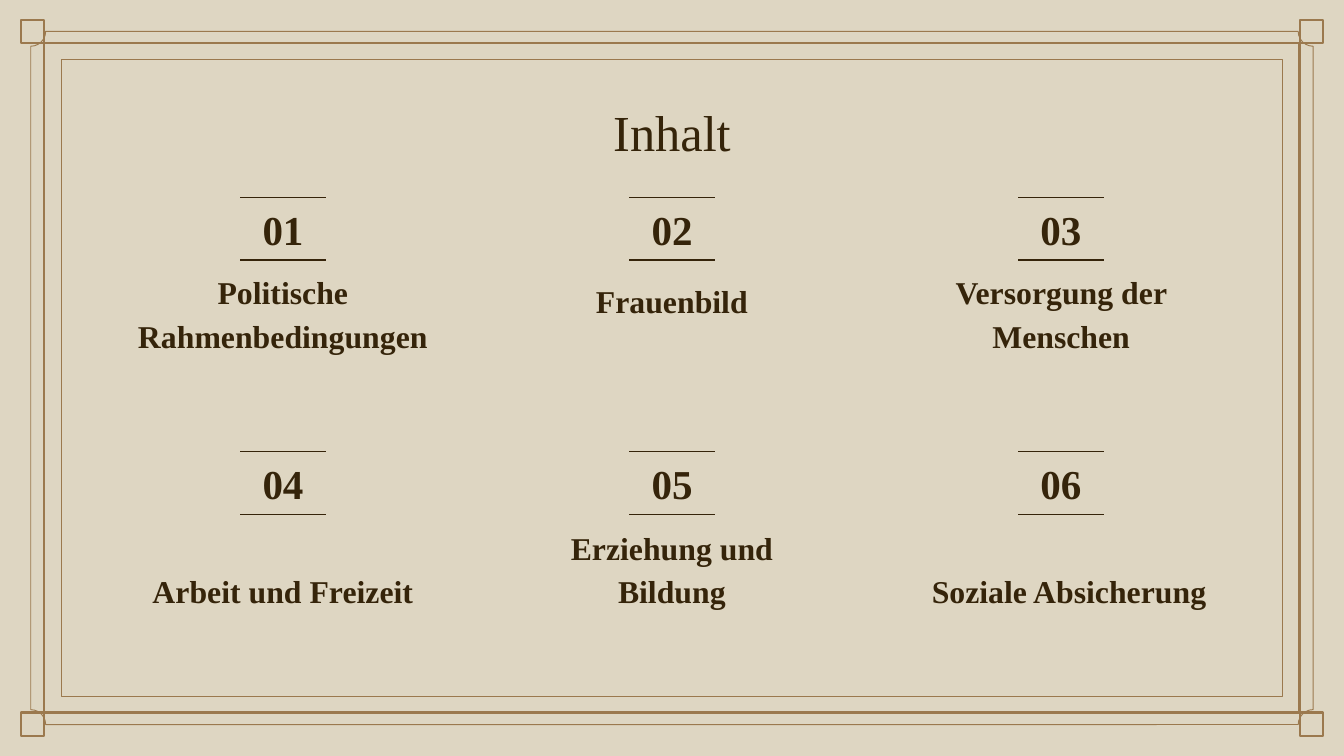
"""Build a framed table-of-contents slide with six numbered topics."""
from dataclasses import dataclass

from lxml.etree import SubElement
from pptx import Presentation
from pptx.dml.color import RGBColor
from pptx.enum.shapes import MSO_CONNECTOR, MSO_SHAPE
from pptx.enum.text import MSO_ANCHOR, MSO_AUTO_SIZE, PP_ALIGN
from pptx.oxml.ns import qn
from pptx.shapes.autoshape import Shape
from pptx.slide import Slide
from pptx.util import Pt

PAPER, BRONZE, INK = "DED6C2", "9B794E", "35240A"
FONT = "Times New Roman"
SLIDE_WIDTH, SLIDE_HEIGHT = 720, 405
COLUMN_CENTERS = (151.6, 360, 568.4)
ROW_TOPS = (105.7, 242)
RULE_WIDTH, RULE_GAP = 45.8, 33.6
NUMBER_WIDTH, NUMBER_HEIGHT = 57, 35.3
CAPTION_HEIGHT = 38.2
CORNER_SIZE, CORNER_MARGIN = 12.5, 11.2
NOTCH_RADIUS = 8


@dataclass(frozen=True)
class Box:
    left: float
    top: float
    width: float
    height: float


@dataclass(frozen=True)
class Topic:
    caption: str
    box: Box


TOPICS = (
    Topic("Politische Rahmenbedingungen", Box(39.6, 159.1, 224, CAPTION_HEIGHT)),
    Topic("Frauenbild", Box(271, 140.4, 178, CAPTION_HEIGHT)),
    Topic("Versorgung der Menschen", Box(479.5, 159.1, 178, CAPTION_HEIGHT)),
    Topic("Arbeit und Freizeit", Box(62.6, 296, 178, CAPTION_HEIGHT)),
    Topic("Erziehung und Bildung", Box(271, 296, 178, CAPTION_HEIGHT)),
    Topic("Soziale Absicherung", Box(483.8, 296, 178, CAPTION_HEIGHT)),
)


def color(value: str) -> RGBColor:
    """Turn a hex string into a colour."""
    return RGBColor.from_string(value)


def inset_box(horizontal: float, vertical: float) -> Box:
    """Return a box centred on the slide with the given margins."""
    return Box(horizontal, vertical, SLIDE_WIDTH - 2 * horizontal, SLIDE_HEIGHT - 2 * vertical)


def add_outline(slide: Slide, preset: MSO_SHAPE, box: Box, weight: float) -> Shape:
    """Draw an unfilled bronze outline."""
    shape = slide.shapes.add_shape(preset, Pt(box.left), Pt(box.top), Pt(box.width), Pt(box.height))
    shape.shadow.inherit = False
    shape.fill.background()
    shape.line.color.rgb = color(BRONZE)
    shape.line.width = Pt(weight)
    return shape


def add_frame(slide: Slide) -> None:
    """Draw the nested frames and the four corner squares."""
    add_outline(slide, MSO_SHAPE.RECTANGLE, inset_box(23.7, 23.2), 1.28)
    add_outline(slide, MSO_SHAPE.RECTANGLE, inset_box(33, 31.8), 0.5)
    notched_box = inset_box(16.5, 16.8)
    notched = add_outline(slide, MSO_SHAPE.PLAQUE, notched_box, 0.5)
    notched.adjustments[0] = NOTCH_RADIUS / notched_box.height
    for left in (CORNER_MARGIN, SLIDE_WIDTH - CORNER_MARGIN - CORNER_SIZE):
        for top in (10.7, SLIDE_HEIGHT - 10.7 - CORNER_SIZE):
            corner = Box(left, top, CORNER_SIZE, CORNER_SIZE)
            add_outline(slide, MSO_SHAPE.RECTANGLE, corner, 1.28)


def write_text(shape: Shape, text: str, box: Box, size: float, bold: bool,
               anchor: MSO_ANCHOR, line_spacing: float = 1.0) -> None:
    """Place a text shape and format its centred text."""
    shape.left, shape.top = Pt(box.left), Pt(box.top)
    shape.width, shape.height = Pt(box.width), Pt(box.height)
    frame = shape.text_frame
    frame.text = text
    frame.word_wrap = True
    frame.auto_size = MSO_AUTO_SIZE.NONE
    frame.vertical_anchor = anchor
    frame.margin_left = frame.margin_right = Pt(7.2)
    frame.margin_top = frame.margin_bottom = Pt(7.2)
    paragraph = frame.paragraphs[0]
    paragraph.alignment = PP_ALIGN.CENTER
    paragraph.line_spacing = line_spacing
    font = paragraph.runs[0].font
    font.name, font.size, font.bold = FONT, Pt(size), bold
    font.color.rgb = color(INK)


def add_text(slide: Slide, text: str, box: Box, size: float,
             anchor: MSO_ANCHOR, line_spacing: float = 1.0) -> None:
    """Add a bold text box."""
    shape = slide.shapes.add_textbox(0, 0, 0, 0)
    write_text(shape, text, box, size, True, anchor, line_spacing)


def add_rule(slide: Slide, center: float, top: float) -> None:
    """Draw a short horizontal rule around a centre."""
    rule = slide.shapes.add_connector(
        MSO_CONNECTOR.STRAIGHT, Pt(center - RULE_WIDTH / 2), Pt(top),
        Pt(center + RULE_WIDTH / 2), Pt(top))
    rule.line.color.rgb = color(INK)
    rule.line.width = Pt(0.75)
    SubElement(rule._element.spPr, qn("a:effectLst"))


def add_topic(slide: Slide, index: int, topic: Topic) -> None:
    """Draw a number between two rules and its caption."""
    row, column = divmod(index, len(COLUMN_CENTERS))
    center, top = COLUMN_CENTERS[column], ROW_TOPS[row]
    number_box = Box(center - NUMBER_WIDTH / 2, top - 0.6, NUMBER_WIDTH, NUMBER_HEIGHT)
    add_text(slide, f"{index + 1:02d}", number_box, 22, MSO_ANCHOR.MIDDLE)
    add_text(slide, topic.caption, topic.box, 17, MSO_ANCHOR.BOTTOM, 1.15)
    add_rule(slide, center, top)
    add_rule(slide, center, top + RULE_GAP)


def main() -> None:
    """Create and save the presentation."""
    presentation = Presentation()
    presentation.slide_width = Pt(SLIDE_WIDTH)
    presentation.slide_height = Pt(SLIDE_HEIGHT)
    slide = presentation.slides.add_slide(presentation.slide_layouts.get_by_name("Title Only"))
    slide.background.fill.solid()
    slide.background.fill.fore_color.rgb = color(PAPER)
    add_frame(slide)
    write_text(slide.shapes.title, "Inhalt", Box(56.7, 46.8, 606.6, 45.4), 27, False, MSO_ANCHOR.TOP)
    for index, topic in enumerate(TOPICS):
        add_topic(slide, index, topic)
    presentation.save("out.pptx")


if __name__ == "__main__":
    main()
